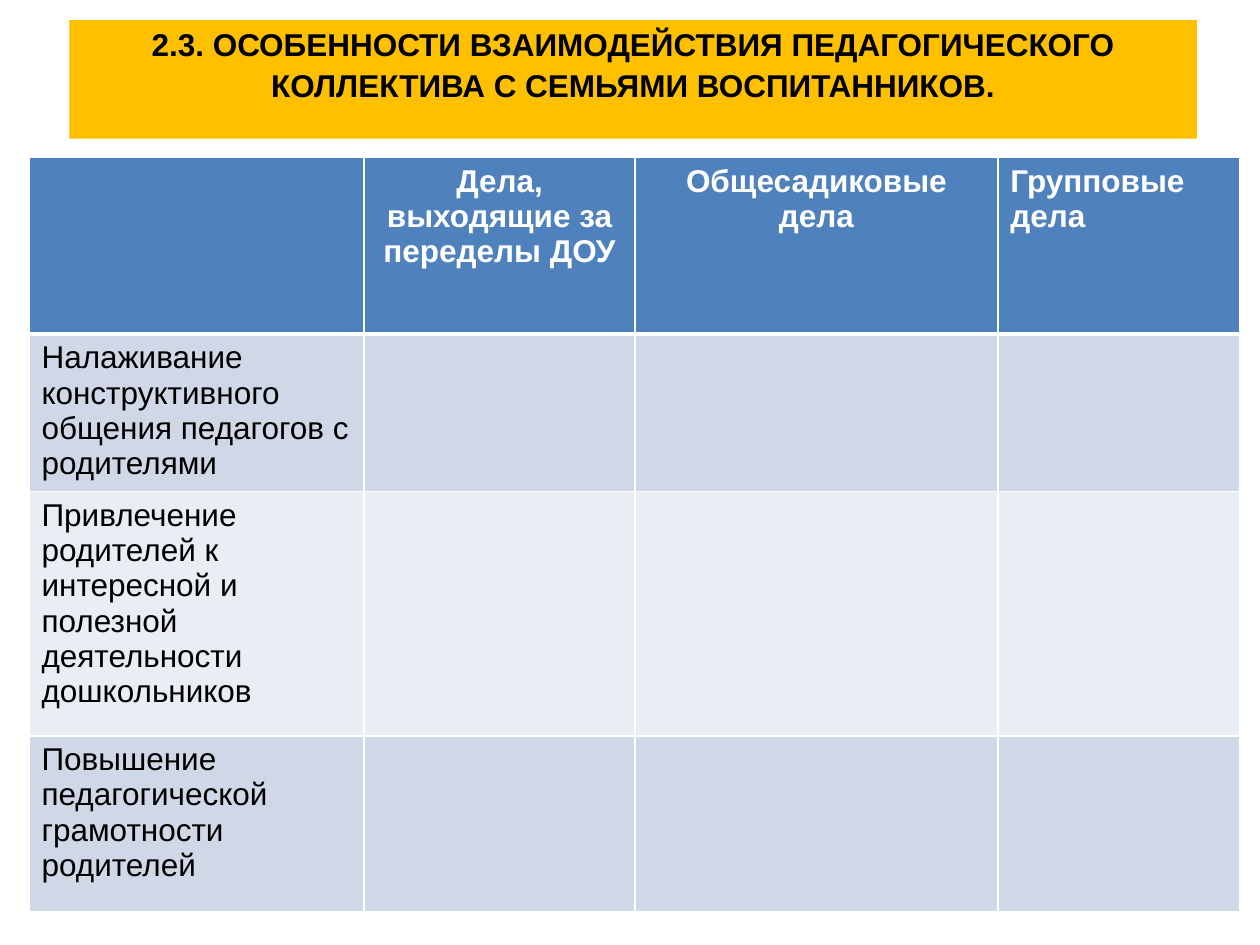
from dataclasses import dataclass

from lxml import etree
from pptx import Presentation
from pptx import util as u
from pptx.dml.color import RGBColor
from pptx.enum import text
from pptx.oxml import ns


@dataclass(frozen=True)
class Theme:
    font: str = "Arial"
    size: int = 18
    dark: str = "000000"
    light: str = "FFFFFF"
    banner: str = "FFC000"
    header: str = "4F81BD"
    bands: tuple = ("D0D8E8", "E9EDF4")
    border: float = 1
    header_border: float = 3


THEME = Theme()
TITLE = ("2.3. ОСОБЕННОСТИ ВЗАИМОДЕЙСТВИЯ ПЕДАГОГИЧЕСКОГО "
         "КОЛЛЕКТИВА С СЕМЬЯМИ ВОСПИТАННИКОВ.")
HEADINGS = ["", "Дела, выходящие за переделы ДОУ", "Общесадиковые дела", "Групповые дела"]
GOALS = [
    "Налаживание конструктивного общения педагогов с родителями",
    "Привлечение родителей к интересной и полезной деятельности дошкольников",
    "Повышение педагогической грамотности родителей",
]
COLUMN_WIDTHS = [2.66, 2.15, 2.88, 1.92]
ROW_HEIGHTS = [1.4, 1.25, 1.94, 1.4]


def paint(target, color):
    target.fill.solid()
    target.fill.fore_color.rgb = RGBColor.from_string(color)


def style_paragraph(paragraph, color, bold, alignment):
    paragraph.alignment = alignment
    paragraph.font.name = THEME.font
    paragraph.font.size = u.Pt(THEME.size)
    paragraph.font.bold = bold
    paragraph.font.color.rgb = RGBColor.from_string(color)


def set_borders(cell, bottom, top):
    properties = cell._tc.get_or_add_tcPr()
    widths = {"lnL": THEME.border, "lnR": THEME.border, "lnT": top, "lnB": bottom}
    for position, (tag, width) in enumerate(widths.items()):
        line = etree.Element(ns.qn(f"a:{tag}"), w=str(u.Pt(width)))
        fill = etree.SubElement(line, ns.qn("a:solidFill"))
        etree.SubElement(fill, ns.qn("a:srgbClr"), val=THEME.light)
        properties.insert(position, line)


def add_title(slide, left, top, width, height):
    title = slide.shapes.title
    title.left, title.top, title.width, title.height = left, top, width, height
    paint(title, THEME.banner)
    frame = title.text_frame
    frame.text = TITLE
    frame.word_wrap = True
    frame.auto_size = text.MSO_AUTO_SIZE.NONE
    frame.vertical_anchor = text.MSO_ANCHOR.TOP
    frame.margin_left = frame.margin_right = frame.margin_bottom = 0
    frame.margin_top = u.Inches(0.02)
    paragraph = frame.paragraphs[0]
    paragraph.line_spacing = 1.07
    style_paragraph(paragraph, THEME.dark, True, text.PP_ALIGN.CENTER)


def add_goals_table(slide, left, top, width, height):
    rows = [HEADINGS] + [[goal, "", "", ""] for goal in GOALS]
    table = slide.shapes.add_table(len(rows), len(HEADINGS), left, top, width, height).table
    for column, column_width in zip(table.columns, COLUMN_WIDTHS):
        column.width = u.Inches(column_width)
    for row, row_height in zip(table.rows, ROW_HEIGHTS):
        row.height = u.Inches(row_height)
    for row_index, labels in enumerate(rows):
        is_header = row_index == 0
        fill = THEME.header if is_header else THEME.bands[(row_index - 1) % 2]
        color = THEME.light if is_header else THEME.dark
        top_border = THEME.header_border if row_index == 1 else THEME.border
        bottom_border = THEME.header_border if is_header else THEME.border
        for column_index, label in enumerate(labels):
            cell = table.cell(row_index, column_index)
            cell.text = label
            paint(cell, fill)
            set_borders(cell, bottom_border, top_border)
            centered = is_header and column_index in (1, 2)
            alignment = text.PP_ALIGN.CENTER if centered else text.PP_ALIGN.LEFT
            style_paragraph(cell.text_frame.paragraphs[0], color, is_header, alignment)


def main():
    presentation = Presentation()
    presentation.slide_width, presentation.slide_height = u.Inches(10), u.Inches(7.5)
    slide = presentation.slides.add_slide(presentation.slide_layouts[5])
    add_title(slide, u.Inches(0.55), u.Inches(0.16), u.Inches(8.95), u.Inches(0.94))
    add_goals_table(slide, u.Inches(0.23), u.Inches(1.25),
                    u.Inches(sum(COLUMN_WIDTHS)), u.Inches(sum(ROW_HEIGHTS)))
    presentation.save("out.pptx")


if __name__ == "__main__":
    main()
